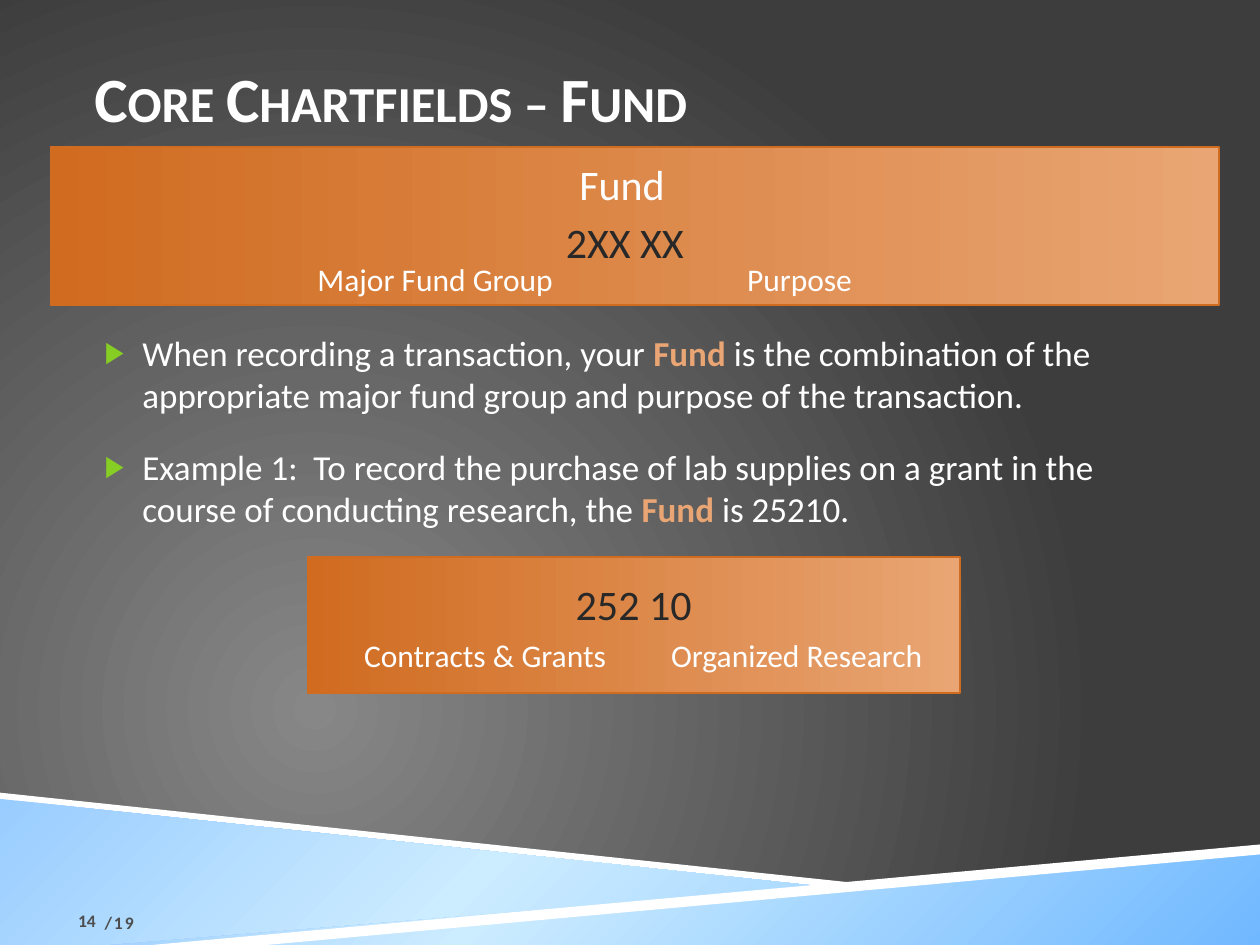
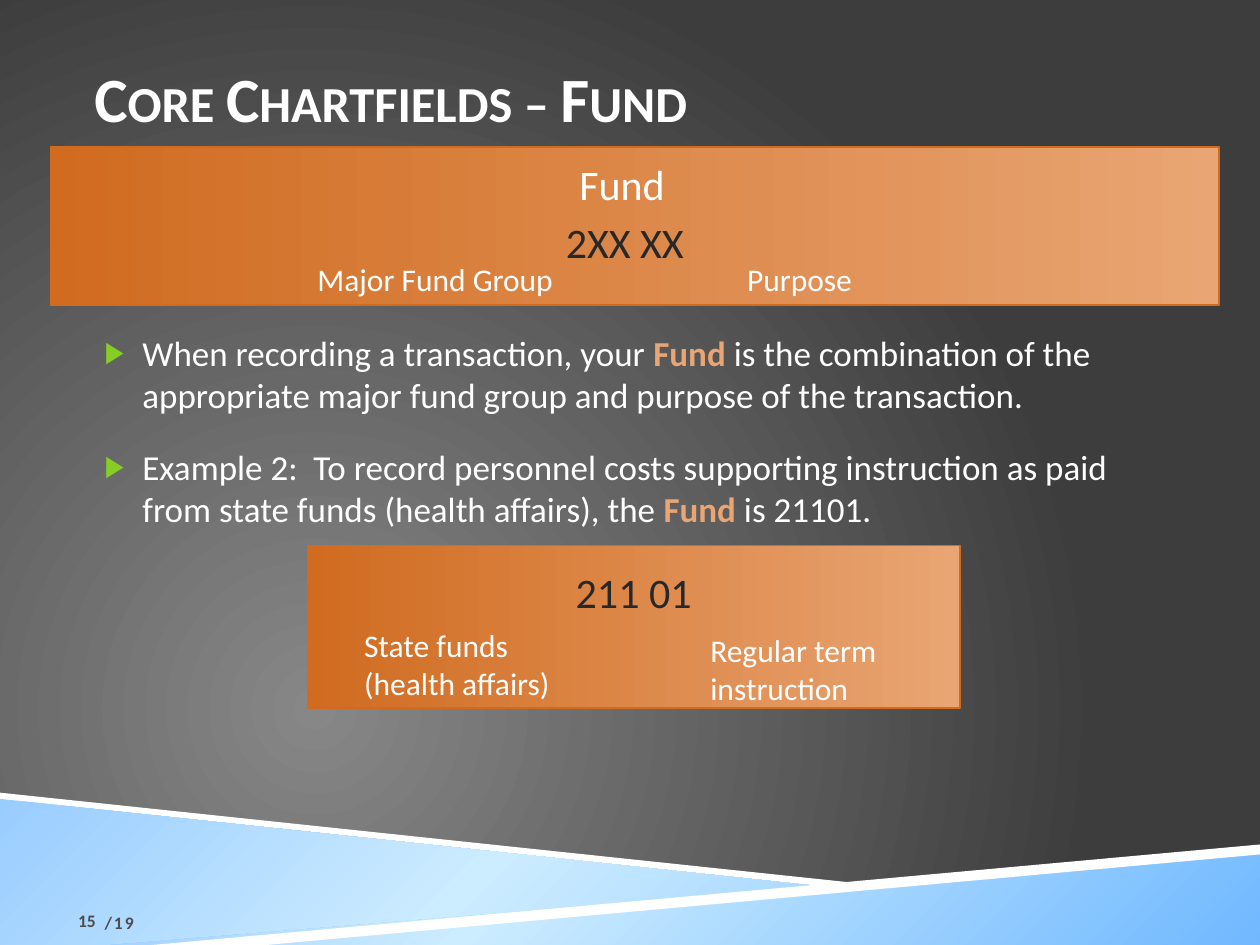
from pptx import Presentation
from pptx.dml.color import RGBColor
from pptx.enum.shapes import MSO_SHAPE
from pptx.enum.text import MSO_ANCHOR, MSO_AUTO_SIZE, PP_ALIGN
from pptx.oxml import parse_xml
from pptx.oxml.ns import nsdecls, qn
from pptx.util import Cm, Pt

FONT = "Calibri"
WHITE = RGBColor(0xFF, 0xFF, 0xFF)
DARK = RGBColor(0x28, 0x28, 0x28)
GRAY = RGBColor(0x4D, 0x4D, 0x4D)
GREEN = RGBColor(0x86, 0xCE, 0x24)
ORANGE = RGBColor(0xD0, 0x6B, 0x20)
PEACH = RGBColor(0xE9, 0xA5, 0x73)
BACKGROUND = [(0, RGBColor(0x87, 0x87, 0x87)), (100, RGBColor(0x3D, 0x3D, 0x3D))]
SKY = [(0, RGBColor(0x70, 0xB8, 0xFF)), (64, RGBColor(0xCC, 0xEC, 0xFF)),
       (100, RGBColor(0x99, 0xCC, 0xFF))]

UPPER_BAND = [(0, 15.98), (0, 16.15), (20.07, 18.29), (21.13, 18.21)]
LEFT_WEDGE = [(-0.05, 16.1), (-0.05, 19.1), (28.1, 19.1)]
RIGHT_WEDGE = [(25.43, 17.17), (25.43, 19.08), (1.88, 19.08)]
LOWER_BAND = [(25.45, 17.02), (2.74, 19.08), (5.05, 19.08), (25.45, 17.22)]

EXAMPLES = [
    {"number": "14", "lead": "Example 1:  To record the purchase of lab supplies on a grant "
                             "in the course of conducting research, the ",
     "fund": "25210", "top": 11.23, "height": 2.74,
     "labels": [("Contracts & Grants", 7.09, 1.47, 6.05),
                ("Organized Research", 13.28, 1.47, 6.05)]},
    {"number": "15", "lead": "Example 2:  To record personnel costs supporting instruction "
                             "as paid from state funds (health affairs), the ",
     "fund": "21101", "top": 11, "height": 3.28,
     "labels": [("State funds\n(health affairs)", 7.09, 1.5, 6.05),
                ("Regular term instruction", 14.07, 1.6, 5.21)]},
]


def path_gradient(fill, parent, stops, focus):
    fill.solid()
    gs = "".join(f'<a:gs pos="{pos * 1000}"><a:srgbClr val="{color}"/></a:gs>'
                 for pos, color in stops)
    rect = " ".join(f'{side}="{value * 1000}"' for side, value in zip("ltrb", focus))
    grad = parse_xml(f'<a:gradFill {nsdecls("a")} rotWithShape="1"><a:gsLst>{gs}</a:gsLst>'
                     f'<a:path path="circle"><a:fillToRect {rect}/></a:path></a:gradFill>')
    parent.replace(parent.find(qn("a:solidFill")), grad)


def add_polygon(shapes, points):
    start, *rest = [(Cm(x), Cm(y)) for x, y in points]
    builder = shapes.build_freeform(*start)
    builder.add_line_segments(rest)
    sp = builder.convert_to_shape()
    sp.shadow.inherit = False
    sp.line.fill.background()
    return sp


def decorate_master(master, slide):
    background = master.background.fill
    path_gradient(background, master.element.find(".//" + qn("p:bgPr")),
                  BACKGROUND, (50, 100, 100, 50))
    tree = master.shapes.element
    for i, points in enumerate([UPPER_BAND, LEFT_WEDGE, RIGHT_WEDGE, LOWER_BAND]):
        sp = add_polygon(slide.shapes, points)
        if points in (LEFT_WEDGE, RIGHT_WEDGE):
            path_gradient(sp.fill, sp.element.spPr, SKY, (100, 100, 0, 0))
        else:
            sp.fill.solid()
            sp.fill.fore_color.rgb = WHITE
        tree.insert(2 + i, sp.element)


def place(sp, left, top, width, height):
    sp.left, sp.top, sp.width, sp.height = Cm(left), Cm(top), Cm(width), Cm(height)


def set_frame(tf, anchor, bottom=0.13):
    tf.word_wrap = True
    tf.auto_size = MSO_AUTO_SIZE.NONE
    tf.vertical_anchor = anchor
    tf.margin_left = tf.margin_right = 0
    tf.margin_top, tf.margin_bottom = Cm(0.13), Cm(bottom)


def add_run(p, text, size, color=WHITE, bold=False):
    r = p.add_run()
    r.text = text
    r.font.name = FONT
    r.font.size = Pt(size)
    r.font.bold = bold
    r.font.color.rgb = color
    return r


def add_label(shapes, text, box, size=18, color=WHITE, align=PP_ALIGN.LEFT):
    tf = shapes.add_textbox(*map(Cm, box)).text_frame
    tf.word_wrap = True
    tf.auto_size = MSO_AUTO_SIZE.SHAPE_TO_FIT_TEXT
    p = tf.paragraphs[0]
    p.alignment = align
    for i, line in enumerate(text.split("\n")):
        if i:
            p.add_line_break()
        add_run(p, line, size, color)


def add_panel(shapes, *box):
    sp = shapes.add_shape(MSO_SHAPE.RECTANGLE, *map(Cm, box))
    sp.shadow.inherit = False
    sp.fill.gradient()
    sp.fill.gradient_angle = 0
    for stop, color in zip(sp.fill.gradient_stops, (ORANGE, PEACH)):
        stop.color.rgb = color
    sp.line.color.rgb = ORANGE
    sp.line.width = Pt(1)


def add_title(slide, text):
    title = slide.shapes.title
    place(title, 1.9, 0.76, 21.59, 2.41)
    set_frame(title.text_frame, MSO_ANCHOR.MIDDLE)
    p = title.text_frame.paragraphs[0]
    p.alignment = PP_ALIGN.LEFT
    r = add_run(p, text, 36, bold=True)
    r.font._element.set("cap", "small")


def add_bullet(p):
    p.space_before, p.space_after = Pt(7), Pt(10)
    pPr = p._p.get_or_add_pPr()
    pPr.set("marL", str(Cm(0.97)))
    pPr.set("indent", str(-Cm(0.76)))
    for xml in (f'<a:buClr {nsdecls("a")}><a:srgbClr val="{GREEN}"/></a:buClr>',
                f'<a:buSzPct {nsdecls("a")} val="85000"/>',
                f'<a:buFont {nsdecls("a")} typeface="{FONT}"/>',
                f'<a:buChar {nsdecls("a")} char="▶"/>'):
        pPr.append(parse_xml(xml))


def add_body(slide, bullets):
    body = slide.placeholders[1]
    place(body, 1.9, 6.55, 21.59, 11.23)
    tf = body.text_frame
    set_frame(tf, MSO_ANCHOR.TOP)
    for i, (before, after) in enumerate(bullets):
        p = tf.add_paragraph() if i else tf.paragraphs[0]
        add_bullet(p)
        add_run(p, before, 20)
        add_run(p, "Fund ", 20, PEACH, bold=True)
        add_run(p, after, 20)


def add_footer(slide, text, box, align, spacing=0):
    tf = slide.shapes.add_textbox(*map(Cm, box)).text_frame
    set_frame(tf, MSO_ANCHOR.BOTTOM, bottom=0)
    p = tf.paragraphs[0]
    p.alignment = align
    r = add_run(p, text, 10, GRAY, bold=True)
    r.font._element.set("spc", str(spacing))


def add_fund_banner(slide):
    shapes = slide.shapes
    add_panel(shapes, 1.02, 2.97, 23.55, 3.18)
    add_label(shapes, "Major Fund Group", (6.15, 5.11, 6.05, 1.02))
    add_label(shapes, "Purpose", (14.81, 5.11, 4.17, 1.02))
    add_label(shapes, "2XX XX", (10.59, 4.24, 4.01, 1.27), 24, DARK, PP_ALIGN.CENTER)
    add_label(shapes, "Fund", (11.43, 3.07, 4.17, 1.27), 24)


def add_example_panel(slide, example):
    shapes = slide.shapes.add_group_shape().shapes
    top, fund = example["top"], example["fund"]
    add_panel(shapes, 6.2, top, 13.16, example["height"])
    add_label(shapes, f"{fund[:3]} {fund[3:]}", (10.77, top + 0.3, 4.01, 1.27),
              24, DARK, PP_ALIGN.CENTER)
    for text, left, offset, width in example["labels"]:
        add_label(shapes, text, (left, top + offset, width, 1.02))


def add_fund_slide(slide, example):
    add_title(slide, "Core Chartfields – Fund")
    add_body(slide, [
        ("When recording a transaction, your ",
         "is the combination of the appropriate major fund group and purpose of the transaction."),
        (example["lead"], f"is {example['fund']}."),
    ])
    add_footer(slide, example["number"], (0.66, 17.75, 1.27, 1.02), PP_ALIGN.RIGHT)
    add_footer(slide, "/19", (2.11, 17.78, 2.34, 1.02), PP_ALIGN.LEFT, 110)
    add_fund_banner(slide)
    add_example_panel(slide, example)


def main():
    prs = Presentation()
    prs.slide_width, prs.slide_height = Cm(25.4), Cm(19.05)
    slides = [prs.slides.add_slide(prs.slide_layouts[1]) for _ in EXAMPLES]
    decorate_master(prs.slide_master, slides[0])
    for slide, example in zip(slides, EXAMPLES):
        add_fund_slide(slide, example)
    prs.save("out.pptx")


if __name__ == "__main__":
    main()
